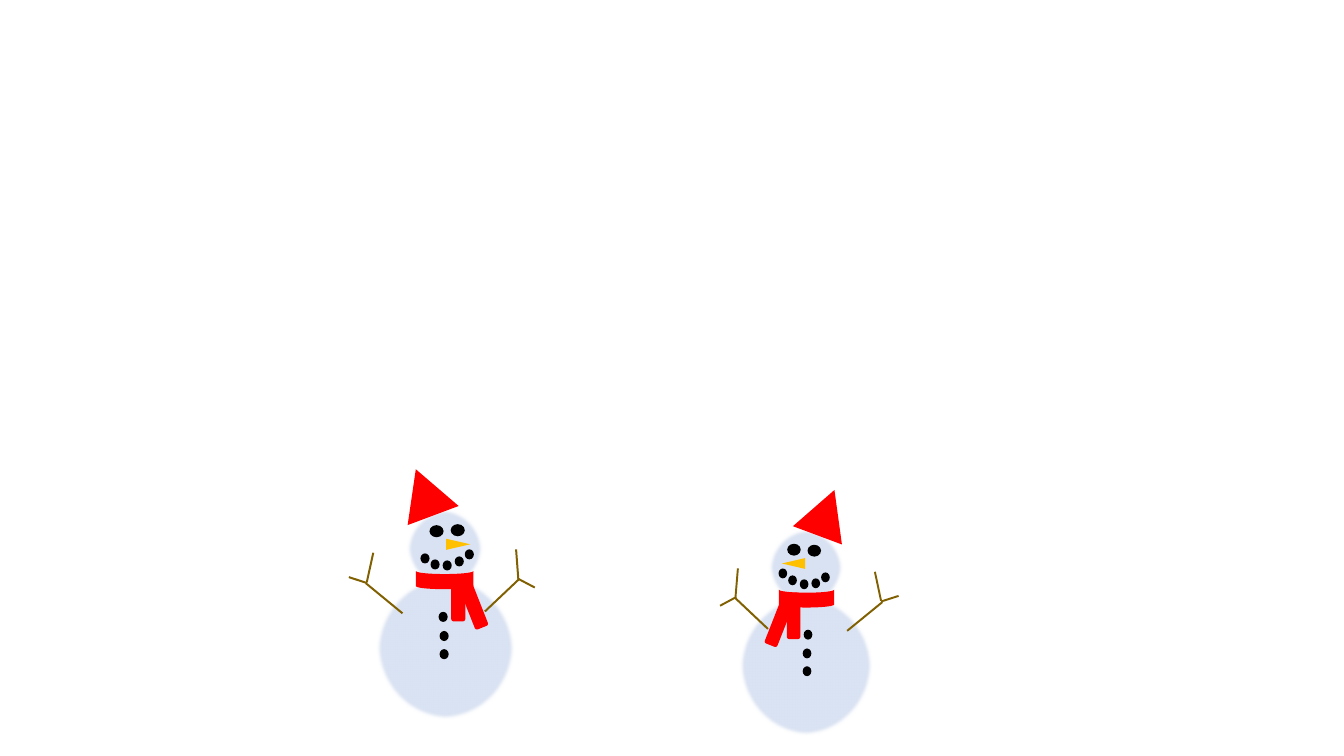
"""Build a slide with two snowmen, the second a slightly smaller mirror image."""
from dataclasses import dataclass

from lxml.etree import SubElement
from pptx import Presentation
from pptx.dml.color import RGBColor
from pptx.enum.shapes import MSO_SHAPE
from pptx.oxml.ns import qn
from pptx.shapes.autoshape import Shape
from pptx.slide import Slide
from pptx.util import Emu

PX = 9144


@dataclass(frozen=True)
class Theme:
    """Colours of the slide."""

    snow: RGBColor = RGBColor(0xDA, 0xE3, 0xF3)
    cloth: RGBColor = RGBColor(0xFF, 0x00, 0x00)
    coal: RGBColor = RGBColor(0x00, 0x00, 0x00)
    carrot: RGBColor = RGBColor(0xFF, 0xC0, 0x00)
    wood: RGBColor = RGBColor(0x80, 0x60, 0x00)


THEME = Theme()


@dataclass(frozen=True)
class Part:
    """One piece of a snowman, placed in px before rotation."""

    kind: MSO_SHAPE
    color: RGBColor
    left: int
    top: int
    width: int
    height: int
    rotation: float = 0
    soft_edge: int = 0


@dataclass(frozen=True)
class Pose:
    """Where a snowman's body centre stands, its scale and its direction."""

    center_x: int
    center_y: int
    scale_x: float = 1
    scale_y: float = 1
    mirrored: bool = False


def snowball(left: int, top: int, width: int, height: int) -> Part:
    """Describe a soft-edged ball of snow."""
    return Part(MSO_SHAPE.OVAL, THEME.snow, left, top, width, height, soft_edge=31750)


def coal(left: int, top: int, width: int = 9, height: int = 10) -> Part:
    """Describe a lump of coal."""
    return Part(MSO_SHAPE.OVAL, THEME.coal, left, top, width, height)


def twig(left: int, top: int, length: int, rotation: float) -> Part:
    """Describe a thin piece of an arm."""
    return Part(MSO_SHAPE.RECTANGLE, THEME.wood, left, top, 2, length, rotation)


BODY_X, BODY_Y = 441, 643
BUTTONS = [(435, 607), (436, 626), (436, 644)]
MOUTH = [(417, 549), (427, 555), (439, 556), (461, 545), (451, 552)]
EYES = [(426, 521), (447, 520)]
TWIGS = [
    (497, 567, 47, 313.4),
    (380, 570, 47, 129.4),
    (521, 569, 19, 117.8),
    (512, 545, 30, 355.7),
    (354, 566, 19, 108),
    (366, 548, 30, 12.4),
]
TWIGS[0] = (497, 567, 47, 46.6)
SNOWMAN = [
    snowball(373, 572, 137, 142),
    snowball(403, 505, 77, 79),
    Part(MSO_SHAPE.ROUNDED_RECTANGLE, THEME.cloth, 431, 586, 47, 14, 90),
    Part(MSO_SHAPE.ISOSCELES_TRIANGLE, THEME.cloth, 394, 464, 54, 49, 339.5),
    Part(MSO_SHAPE.FLOWCHART_STORED_DATA, THEME.cloth, 432, 547, 18, 57, 270),
    Part(MSO_SHAPE.ROUNDED_RECTANGLE, THEME.cloth, 442, 591, 53, 14, 68.5),
    *(coal(left, top) for left, top in BUTTONS + MOUTH),
    *(coal(left, top, 14, 12) for left, top in EYES),
    Part(MSO_SHAPE.ISOSCELES_TRIANGLE, THEME.carrot, 449, 528, 11, 24, 90),
    *(twig(*values) for values in TWIGS),
]
POSES = [Pose(BODY_X, BODY_Y), Pose(800, 660, 0.96, 0.98, mirrored=True)]


def soften(shape: Shape, radius: int) -> None:
    """Blur the outline of a shape by a radius in EMU."""
    effects = shape._element.spPr.find(qn("a:effectLst"))
    SubElement(effects, qn("a:softEdge"), rad=str(radius))


def draw_snowman(slide: Slide, pose: Pose) -> None:
    """Draw all parts of one snowman as a group."""
    group = slide.shapes.add_group_shape()
    direction = -1 if pose.mirrored else 1
    for part in SNOWMAN:
        offset_x = part.left + part.width / 2 - BODY_X
        offset_y = part.top + part.height / 2 - BODY_Y
        middle_x = pose.center_x + direction * pose.scale_x * offset_x
        middle_y = pose.center_y + pose.scale_y * offset_y
        sideways = 45 <= part.rotation % 180 < 135
        across, along = (
            (pose.scale_y, pose.scale_x) if sideways else (pose.scale_x, pose.scale_y)
        )
        width, height = part.width * across, part.height * along
        box = (middle_x - width / 2, middle_y - height / 2, width, height)
        shape = group.shapes.add_shape(
            part.kind, *(Emu(round(length * PX)) for length in box)
        )
        shape.rotation = direction * part.rotation % 360
        shape.fill.solid()
        shape.fill.fore_color.rgb = part.color
        shape.line.fill.background()
        shape.shadow.inherit = False
        if pose.mirrored:
            shape._element.spPr.xfrm.set("flipH", "1")
        if part.soft_edge:
            soften(shape, part.soft_edge)


def main() -> None:
    """Create the presentation and save it."""
    presentation = Presentation()
    presentation.slide_width = Emu(1333 * PX)
    presentation.slide_height = Emu(750 * PX)
    slide = presentation.slides.add_slide(presentation.slide_layouts[6])
    for pose in POSES:
        draw_snowman(slide, pose)
    presentation.save("out.pptx")


if __name__ == "__main__":
    main()
